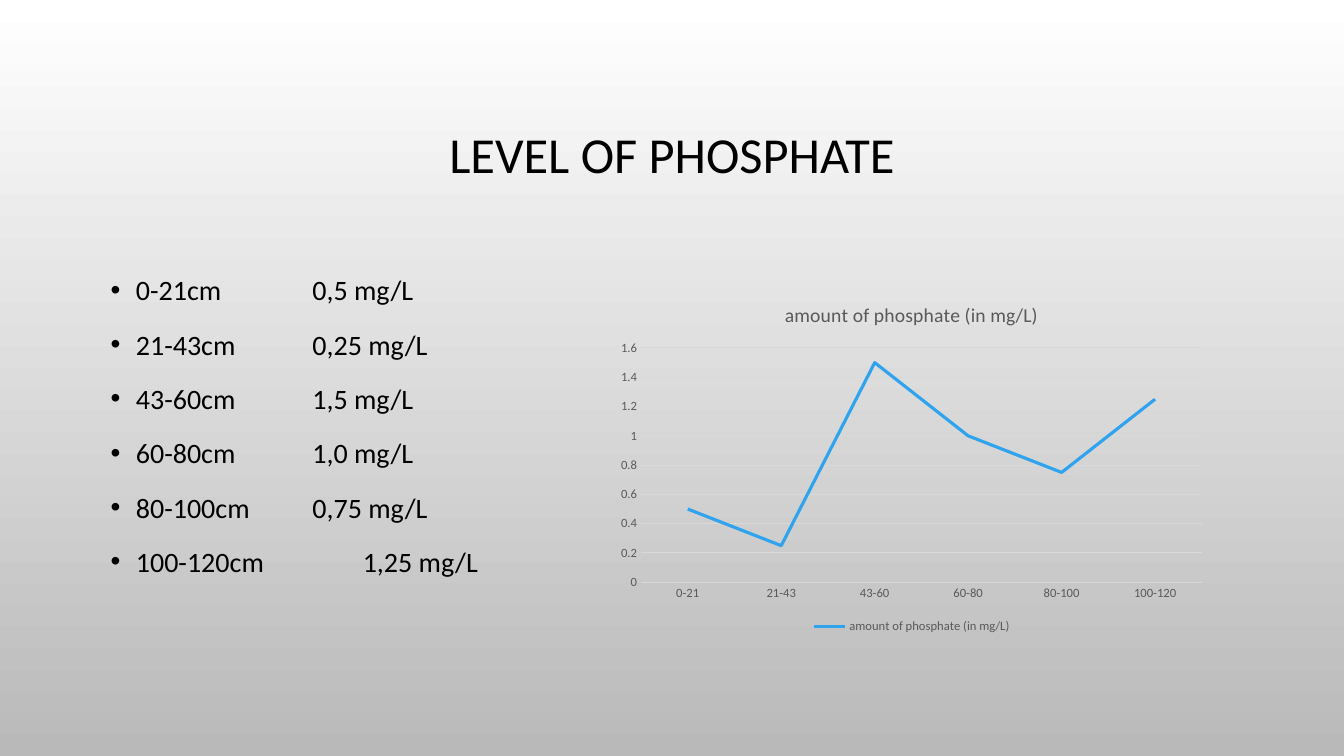
from lxml import etree
from pptx import Presentation
from pptx.chart.data import CategoryChartData
from pptx.dml.color import RGBColor
from pptx.enum.chart import XL_CHART_TYPE, XL_LEGEND_POSITION, XL_TICK_MARK
from pptx.enum.text import MSO_ANCHOR, PP_ALIGN
from pptx.oxml.ns import qn
from pptx.util import Emu, Pt

LINE = XL_CHART_TYPE.LINE
BOTTOM = XL_LEGEND_POSITION.BOTTOM
NO_TICK = XL_TICK_MARK.NONE
MIDDLE = MSO_ANCHOR.MIDDLE
CENTER = PP_ALIGN.CENTER

FONT = "Calibri"
BLACK, GREY, RULE, BLUE = "000000", "595959", "D9D9D9", "2FA3EE"
BACKGROUND = ("FFFFFF", "B9B9B9")
SERIES = "amount of phosphate (in mg/L)"
LEVELS = [
    ("0-21", "0,5", 0.5),
    ("21-43", "0,25", 0.25),
    ("43-60", "1,5", 1.5),
    ("60-80", "1,0", 1),
    ("80-100", "0,75", 0.75),
    ("100-120", "1,25", 1.25),
]


def px(length):
    """Turn px, at 100 to the inch, into EMU."""
    return Emu(length * 9144)


def color(value):
    """Turn a hex string into a colour."""
    return RGBColor.from_string(value)


def apply(target, values):
    """Set each attribute named in values on target."""
    for name, value in values.items():
        setattr(target, name, value)


def style_font(font, size, value):
    """Set the font name, size and colour."""
    apply(font, {"name": FONT, "size": Pt(size), "bold": False})
    font.color.rgb = color(value)


def style_line(line, value, width):
    """Set the colour and width of a line."""
    line.color.rgb = color(value)
    line.width = Pt(width)


def paint_background(page):
    """Fill the page with a gradient from top to bottom."""
    fill = page.background.fill
    fill.gradient()
    fill.gradient_angle = 270
    for stop, value in zip(fill.gradient_stops, BACKGROUND):
        stop.color.rgb = color(value)


def add_title(page, text, left, top, width, height):
    """Place and format the title placeholder."""
    title = page.shapes.title
    apply(title, {"left": px(left), "top": px(top),
                  "width": px(width), "height": px(height)})
    frame = title.text_frame
    apply(frame, {"text": text, "vertical_anchor": MIDDLE, "word_wrap": True})
    para = frame.paragraphs[0]
    apply(para, {"alignment": CENTER, "line_spacing": 0.9})
    style_font(para.font, 36, BLACK)


def add_bullet(para):
    """Give a paragraph a hanging round bullet."""
    properties = para._p.get_or_add_pPr()
    properties.set("marL", str(px(25)))
    properties.set("indent", str(px(-25)))
    bullet_color = etree.SubElement(properties, qn("a:buClr"))
    etree.SubElement(bullet_color, qn("a:srgbClr"), val=BLACK)
    etree.SubElement(properties, qn("a:buFont"), typeface="Arial")
    etree.SubElement(properties, qn("a:buChar"), char="•")


def add_list(page, lines, left, top, width, height):
    """Add a bulleted list with one paragraph a line."""
    box = page.shapes.add_textbox(px(left), px(top), px(width), px(height))
    frame = box.text_frame
    frame.word_wrap = True
    for index, line in enumerate(lines):
        para = frame.add_paragraph() if index else frame.paragraphs[0]
        para.text = line
        add_bullet(para)
        apply(para, {"line_spacing": 1.2, "space_before": Pt(10 if index else 0)})
        style_font(para.font, 20, BLACK)


def add_level_chart(page, left, top, width, height):
    """Add the line chart of phosphate by depth."""
    data = CategoryChartData()
    data.categories = [depth for depth, _, _ in LEVELS]
    data.add_series(SERIES, [value for _, _, value in LEVELS])
    chart = page.shapes.add_chart(
        LINE, px(left), px(top), px(width), px(height), data).chart
    style_font(chart.font, 10, BLACK)
    apply(chart, {"has_title": True, "has_legend": True})
    title = chart.chart_title.text_frame
    title.text = SERIES
    style_font(title.paragraphs[0].runs[0].font, 14, GREY)
    apply(chart.legend, {"position": BOTTOM, "include_in_layout": False})
    style_font(chart.legend.font, 9, GREY)
    for axis in (chart.category_axis, chart.value_axis):
        apply(axis, {"major_tick_mark": NO_TICK, "minor_tick_mark": NO_TICK})
        style_font(axis.tick_labels.font, 9, GREY)
    style_line(chart.category_axis.format.line, RULE, 0.75)
    chart.value_axis.format.line.fill.background()
    style_line(chart.value_axis.major_gridlines.format.line, RULE, 0.75)
    chart.plots[0].vary_by_categories = False
    series = chart.plots[0].series[0]
    series.smooth = False
    style_line(series.format.line, BLUE, 2.25)


def main():
    """Build the slide and save it."""
    deck = Presentation()
    apply(deck, {"slide_width": px(1333), "slide_height": px(750)})
    page = deck.slides.add_slide(deck.slide_layouts[5])
    paint_background(page)
    add_title(page, "LEVEL OF PHOSPHATE", 100, 68, 1133, 175)
    lines = [f"{depth}cm\t\t{amount} mg/L" for depth, amount, _ in LEVELS]
    add_list(page, lines, 100, 259, 1133, 374)
    add_level_chart(page, 604, 283, 600, 350)
    deck.save("out.pptx")


if __name__ == "__main__":
    main()
